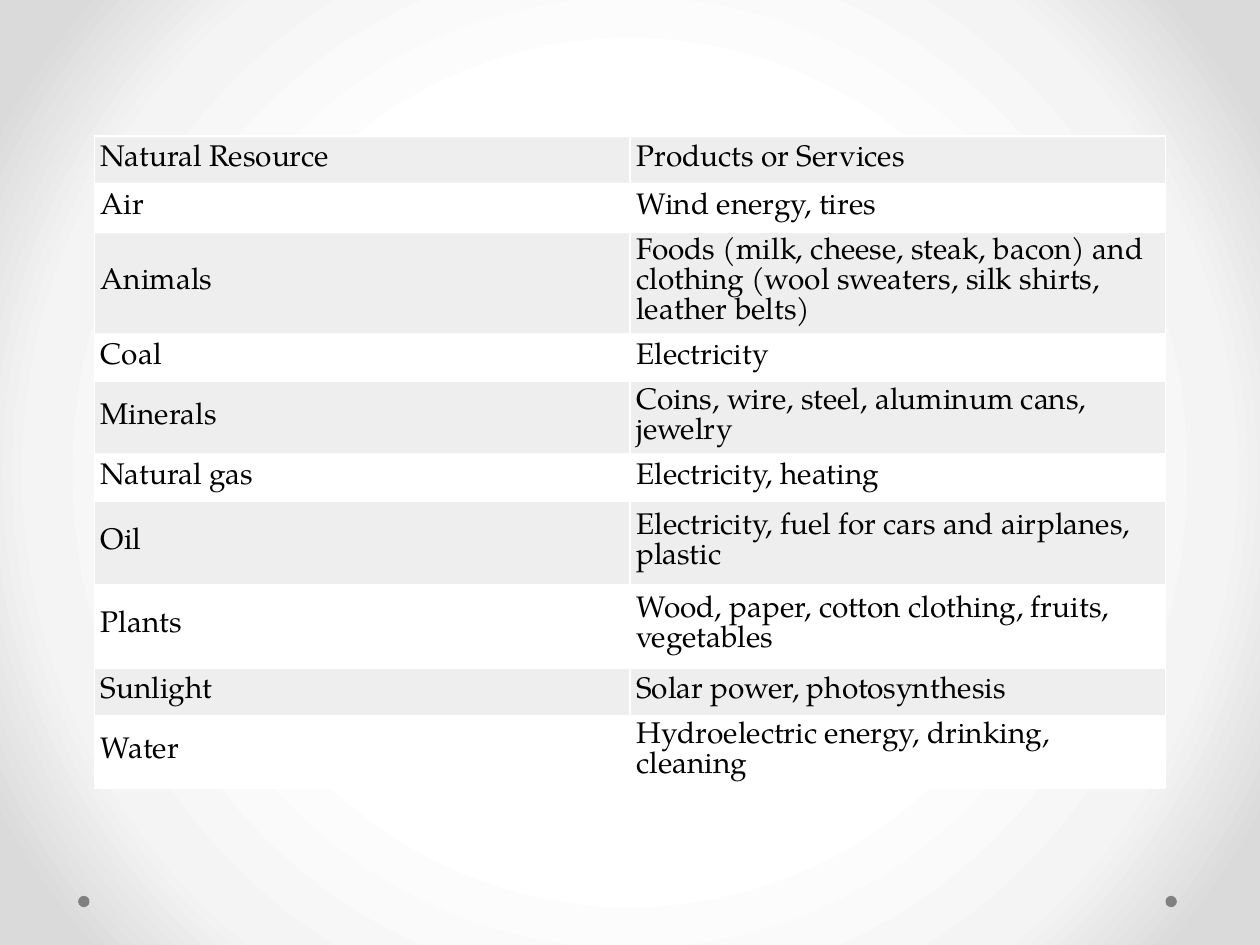
from typing import NamedTuple

from lxml.etree import SubElement
from pptx import Presentation
from pptx.dml.color import RGBColor
from pptx.enum.shapes import MSO_SHAPE
from pptx.enum.text import MSO_ANCHOR
from pptx.oxml.ns import qn
from pptx.slide import Slide
from pptx.util import Inches, Pt

FONT = "TeX Gyre Pagella"
BLACK = RGBColor(0x00, 0x00, 0x00)
WHITE = RGBColor(0xFF, 0xFF, 0xFF)
BAND_GRAY = RGBColor(0xEE, 0xEE, 0xEE)
DOT_GRAY = RGBColor(0x80, 0x80, 0x80)
LIGHT_GRAY = RGBColor(0xF4, 0xF4, 0xF4)
EDGE_GRAY = RGBColor(0xDA, 0xDA, 0xDA)
GLOW_STOPS = ((50, WHITE), (76, LIGHT_GRAY), (92, EDGE_GRAY))


class Resource(NamedTuple):
    name: str
    products: str
    height: float = 0.38


RESOURCES = (
    Resource("Natural Resource", "Products or Services"),
    Resource("Air", "Wind energy, tires"),
    Resource(
        "Animals",
        "Foods (milk, cheese, steak, bacon) and clothing "
        "(wool sweaters, silk shirts, leather belts)",
        0.49,
    ),
    Resource("Coal", "Electricity"),
    Resource("Minerals", "Coins, wire, steel, aluminum cans, jewelry"),
    Resource("Natural gas", "Electricity, heating"),
    Resource("Oil", "Electricity, fuel for cars and airplanes, plastic", 0.66),
    Resource("Plants", "Wood, paper, cotton clothing, fruits, vegetables", 0.66),
    Resource("Sunlight", "Solar power, photosynthesis"),
    Resource("Water", "Hydroelectric energy, drinking, cleaning"),
)


def paint_background(slide: Slide) -> None:
    slide.background.fill.gradient()
    gradient = slide.element.find(".//" + qn("a:gradFill"))
    for child in list(gradient):
        gradient.remove(child)
    stops = SubElement(gradient, qn("a:gsLst"))
    for percent, color in GLOW_STOPS:
        stop = SubElement(stops, qn("a:gs"), pos=str(percent * 1000))
        SubElement(stop, qn("a:srgbClr"), val=str(color))
    glow = SubElement(gradient, qn("a:path"), path="circle")
    center = dict.fromkeys("ltrb", "50000")
    SubElement(glow, qn("a:fillToRect"), **center)


def add_dot(slide: Slide, left: float) -> None:
    dot = slide.shapes.add_shape(
        MSO_SHAPE.OVAL, Inches(left), Inches(7.11), Inches(0.09), Inches(0.09)
    )
    dot.shadow.inherit = False
    dot.fill.solid()
    dot.fill.fore_color.rgb = DOT_GRAY
    dot.line.fill.background()


def fill_cell(cell, text: str, color: RGBColor) -> None:
    cell.fill.solid()
    cell.fill.fore_color.rgb = color
    cell.vertical_anchor = MSO_ANCHOR.MIDDLE
    cell.margin_left = cell.margin_right = Inches(0.05)
    cell.margin_top = cell.margin_bottom = Inches(0.05)
    cell.text = text
    paragraph = cell.text_frame.paragraphs[0]
    paragraph.line_spacing = Pt(17)
    paragraph.font.name = FONT
    paragraph.font.size = Pt(17)
    paragraph.font.bold = False
    paragraph.font.color.rgb = BLACK


def add_resource_table(slide: Slide) -> None:
    total_height = sum(resource.height for resource in RESOURCES)
    table = slide.shapes.add_table(
        len(RESOURCES), 2,
        Inches(0.75), Inches(1.08), Inches(8.5), Inches(total_height),
    ).table
    table.first_row = False
    table.horz_banding = False
    for index, resource in enumerate(RESOURCES):
        table.rows[index].height = Inches(resource.height)
        color = WHITE if index % 2 else BAND_GRAY
        fill_cell(table.cell(index, 0), resource.name, color)
        fill_cell(table.cell(index, 1), resource.products, color)


def main() -> None:
    presentation = Presentation()
    presentation.slide_width = Inches(10)
    presentation.slide_height = Inches(7.5)
    slide = presentation.slides.add_slide(presentation.slide_layouts[6])
    paint_background(slide)
    for left in (9.25, 0.62):
        add_dot(slide, left)
    add_resource_table(slide)
    presentation.save("out.pptx")


if __name__ == "__main__":
    main()
